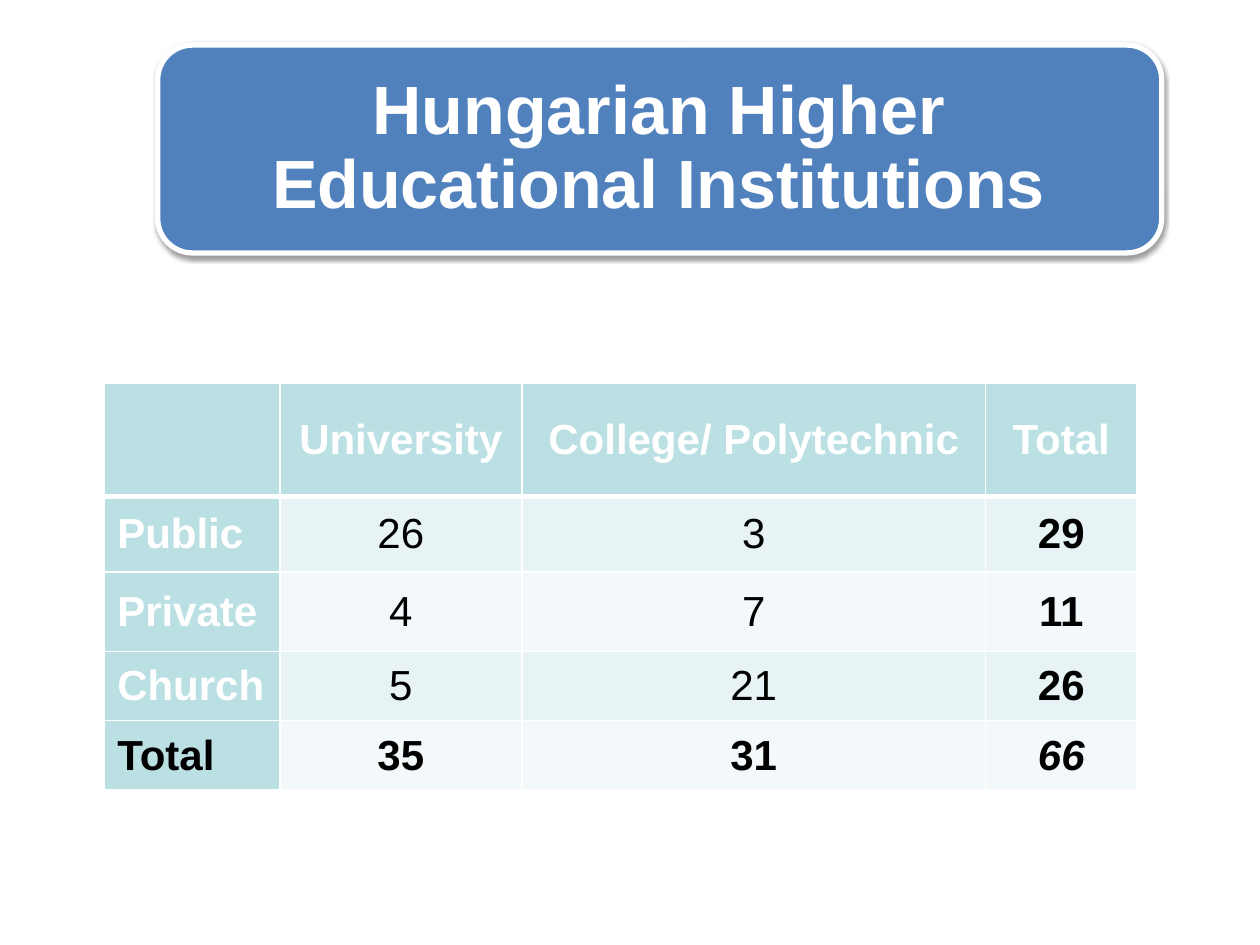
"""Build a slide with a title banner and a table of Hungarian institutions."""
import pptx
import pptx.util
import pptx.dml.color
import pptx.enum.shapes
import pptx.enum.text
import pptx.oxml
import pptx.oxml.ns

TITLE = "Hungarian Higher Educational Institutions"
ROWS = [
    ["", "University", "College/ Polytechnic", "Total"],
    ["Public", "26", "3", "29"],
    ["Private", "4", "7", "11"],
    ["Church", "5", "21", "26"],
    ["Total", "35", "31", "66"],
]
WIDTHS = [3.53, 4.88, 9.35, 3.05]
HEIGHTS = [2.29, 1.52, 1.6, 1.4, 1.4]
WHITE, BLACK, BLUE = "FFFFFF", "000000", "5081BD"
HEAD, BANDS = "BBE0E3", ["F3F9FA", "E7F3F4"]
NS = pptx.oxml.ns.nsdecls("a")
Cm, Pt = pptx.util.Cm, pptx.util.Pt
ALIGN = pptx.enum.text.PP_ALIGN
MIDDLE = pptx.enum.text.MSO_ANCHOR.MIDDLE


def paint(target, color):
    target.solid()
    target.fore_color.rgb = pptx.dml.color.RGBColor.from_string(color)


def write(frame, text, size=24, color=BLACK, bold=False, italic=False,
          align=ALIGN.CENTER, space=1.0):
    para = frame.paragraphs[0]
    para.alignment, para.line_spacing = align, space
    if text:
        run = para.add_run()
        run.text = text
        font = run.font
        font.name, font.size = "Arial", Pt(size)
        font.bold, font.italic = bold, italic
        paint(font.fill, color)


def edge(cell, side, width):
    cell._tc.get_or_add_tcPr().append(pptx.oxml.parse_xml(
        f'<a:{side} {NS} w="{Pt(width)}"><a:solidFill>'
        f'<a:srgbClr val="{WHITE}"/></a:solidFill></a:{side}>'))


def banner(slide):
    kind = pptx.enum.shapes.MSO_SHAPE.ROUNDED_RECTANGLE
    shape = slide.shapes.add_shape(kind, Cm(3.18), Cm(0.91), Cm(20.24), Cm(4.19))
    paint(shape.fill, BLUE)
    paint(shape.line.fill, WHITE)
    shape.line.width = Pt(3)
    shape._element.spPr.append(pptx.oxml.parse_xml(
        f'<a:effectLst {NS}><a:outerShdw blurRad="{Pt(3.1)}" dist="{Pt(1.6)}" '
        f'dir="5400000" rotWithShape="0"><a:srgbClr val="{BLACK}">'
        '<a:alpha val="38000"/></a:srgbClr></a:outerShdw></a:effectLst>'))
    box = slide.shapes.add_textbox(Cm(3.38), Cm(1.12), Cm(19.81), Cm(3.78))
    frame = box.text_frame
    frame.word_wrap, frame.vertical_anchor = True, MIDDLE
    frame.margin_left = frame.margin_right = Cm(0.41)
    frame.margin_top = frame.margin_bottom = Cm(0.41)
    write(frame, TITLE, size=39, color=WHITE, bold=True, space=0.9)


def grid(slide):
    last, end = len(ROWS) - 1, len(WIDTHS) - 1
    table = slide.shapes.add_table(
        len(ROWS), len(WIDTHS), Cm(2.11), Cm(7.72),
        Cm(sum(WIDTHS)), Cm(sum(HEIGHTS))).table
    for col, width in zip(table.columns, WIDTHS):
        col.width = Cm(width)
    for row, height in zip(table.rows, HEIGHTS):
        row.height = Cm(height)
    for r, row in enumerate(ROWS):
        for c, text in enumerate(row):
            cell = table.cell(r, c)
            label = r == 0 or c == 0
            for side in ("lnL", "lnR", "lnT", "lnB"):
                thick = (r, side) in ((0, "lnB"), (1, "lnT"))
                edge(cell, side, 3 if thick else 1)
            paint(cell.fill, HEAD if label else BANDS[r % 2])
            cell.vertical_anchor = MIDDLE
            write(cell.text_frame, text,
                  color=WHITE if label and r < last else BLACK,
                  bold=label or r == last or c == end,
                  italic=r == last and c == end,
                  align=ALIGN.LEFT if c == 0 else ALIGN.CENTER)


def main():
    deck = pptx.Presentation()
    deck.slide_width, deck.slide_height = Cm(25.4), Cm(19.05)
    slide = deck.slides.add_slide(deck.slide_layouts[6])
    paint(slide.background.fill, WHITE)
    grid(slide)
    banner(slide)
    deck.save("out.pptx")


if __name__ == "__main__":
    main()
